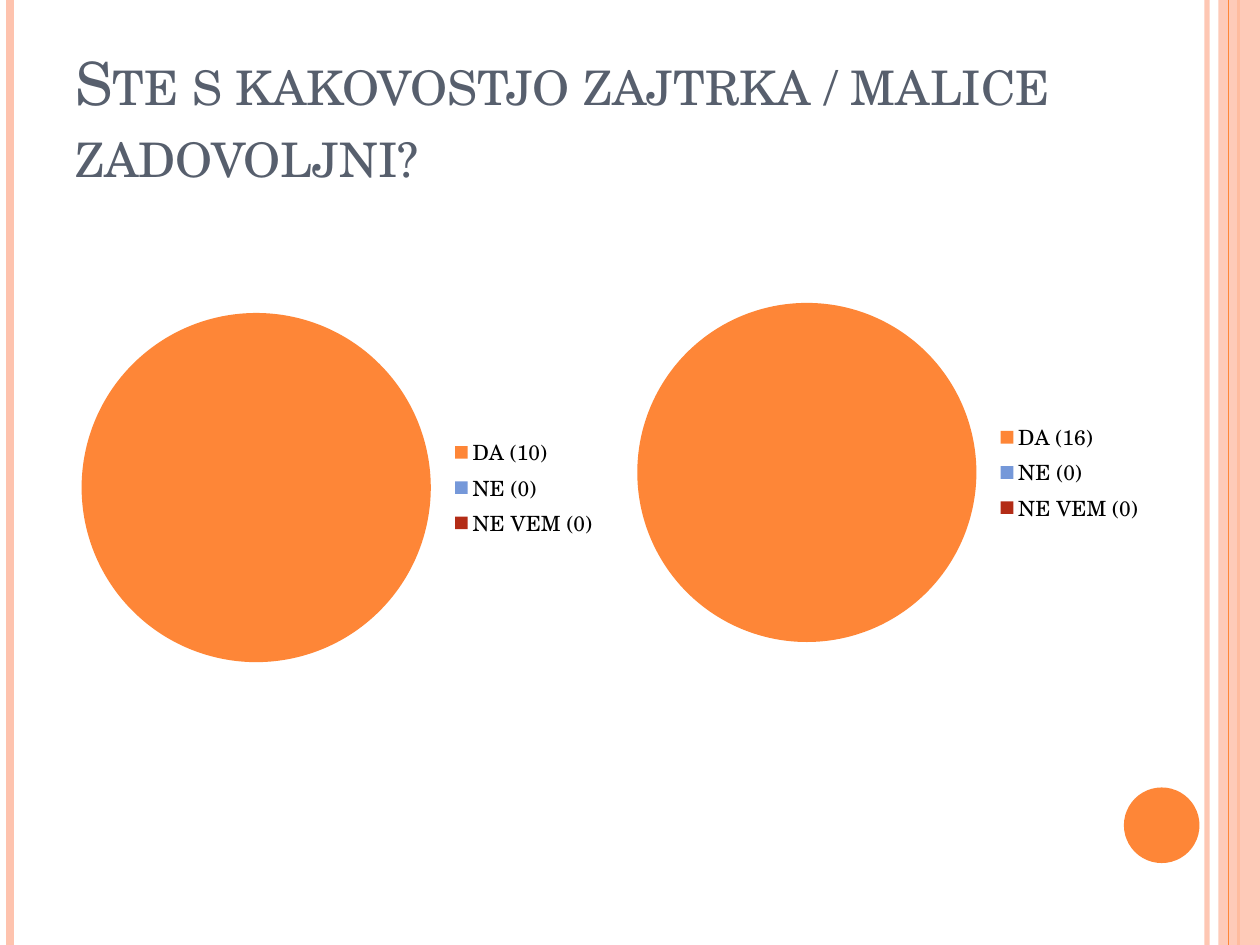
from lxml import etree
from pptx import Presentation
from pptx.chart.data import CategoryChartData
from pptx.dml.color import RGBColor
from pptx.enum.chart import XL_CHART_TYPE as Kind, XL_LEGEND_POSITION as Side
from pptx.enum.shapes import MSO_CONNECTOR as Conn, MSO_SHAPE as Form
from pptx.enum.text import MSO_ANCHOR as Anchor
from pptx.oxml.ns import qn
from pptx.util import Inches, Pt

HUES = {
    "peach": "FEC3AE",
    "orange": "FE8637",
    "blue": "7598D9",
    "red": "B32C16",
    "slate": "575F6D",
    "black": "000000",
}
FACE = "TeX Gyre Schola"
WIDE, HIGH = 10, 7.5


class Deck:
    def __init__(self, slide):
        self.slide = slide
        self.shapes = slide.shapes

    def hue(self, name):
        return RGBColor.from_string(HUES[name])

    def font(self, font, size, hue):
        for key, val in {"name": FACE, "size": Pt(size)}.items():
            setattr(font, key, val)
        font.color.rgb = self.hue(hue)

    def fade(self, part, alpha):
        """Set the opacity, in percent, of the solid colour inside part."""
        tint = next(part.iter(qn("a:srgbClr")))
        etree.SubElement(tint, qn("a:alpha")).set("val", str(alpha * 1000))

    def stripe(self, x, hue, width, alpha=100):
        """Draw a vertical line over the full height of the slide."""
        line = self.shapes.add_connector(
            Conn.STRAIGHT, Inches(x), Inches(0), Inches(x), Inches(HIGH))
        line.line.color.rgb = self.hue(hue)
        line.line.width = Pt(width)
        props = line._element.spPr
        etree.SubElement(props, qn("a:effectLst"))
        if alpha < 100:
            self.fade(props, alpha)

    def shape(self, form, box, hue, alpha=100):
        item = self.shapes.add_shape(form, *map(Inches, box))
        item.shadow.inherit = False
        item.fill.solid()
        item.fill.fore_color.rgb = self.hue(hue)
        item.line.fill.background()
        if alpha < 100:
            self.fade(item._element.spPr, alpha)

    def title(self, text, box):
        frame = self.shapes.add_textbox(*map(Inches, box)).text_frame
        for key, val in {"word_wrap": True, "vertical_anchor": Anchor.BOTTOM}.items():
            setattr(frame, key, val)
        run = frame.paragraphs[0].add_run()
        run.text = text
        self.font(run.font, 34, "slate")
        run._r.get_or_add_rPr().set("cap", "small")

    def pie(self, box, cats, vals):
        data = CategoryChartData()
        data.categories = cats
        data.add_series("Series 1", vals)
        chart = self.shapes.add_chart(Kind.PIE, *map(Inches, box), data).chart
        self.font(chart.font, 10, "black")
        for key, val in {"has_title": False, "has_legend": True}.items():
            setattr(chart, key, val)
        legend = chart.legend
        for key, val in {"position": Side.RIGHT, "include_in_layout": False}.items():
            setattr(legend, key, val)
        self.font(legend.font, 12, "black")
        plot = chart.plots[0]
        plot.vary_by_categories = True
        for i, hue in enumerate(("orange", "blue", "red")):
            fill = plot.series[0].points[i].format.fill
            fill.solid()
            fill.fore_color.rgb = self.hue(hue)


def main():
    prs = Presentation()
    prs.slide_width, prs.slide_height = Inches(WIDE), Inches(HIGH)
    deck = Deck(prs.slides.add_slide(prs.slide_layouts[6]))

    deck.stripe(9.58, "peach", 3, 93)
    deck.stripe(0.08, "peach", 4.5)
    deck.stripe(9.83, "orange", 1.5)
    deck.shape(Form.RECTANGLE, (9.67, 0, 0.33, HIGH), "peach", 87)
    deck.stripe(9.75, "orange", 0.75)
    deck.shape(Form.OVAL, (8.92, 6.25, 0.6, 0.6), "orange")

    deck.title("Ste s kakovostjo zajtrka / malice zadovoljni?", (0.5, 0.3, 8.17, 1.25))
    for count, box in ((10, (0.51, 2.1, 4.33, 3.54)), (16, (4.92, 1.94, 4.25, 3.62))):
        deck.pie(box, (f"DA ({count})", "NE (0)", "NE VEM (0)"), (100, 0, 0))

    prs.save("out.pptx")


if __name__ == "__main__":
    main()
